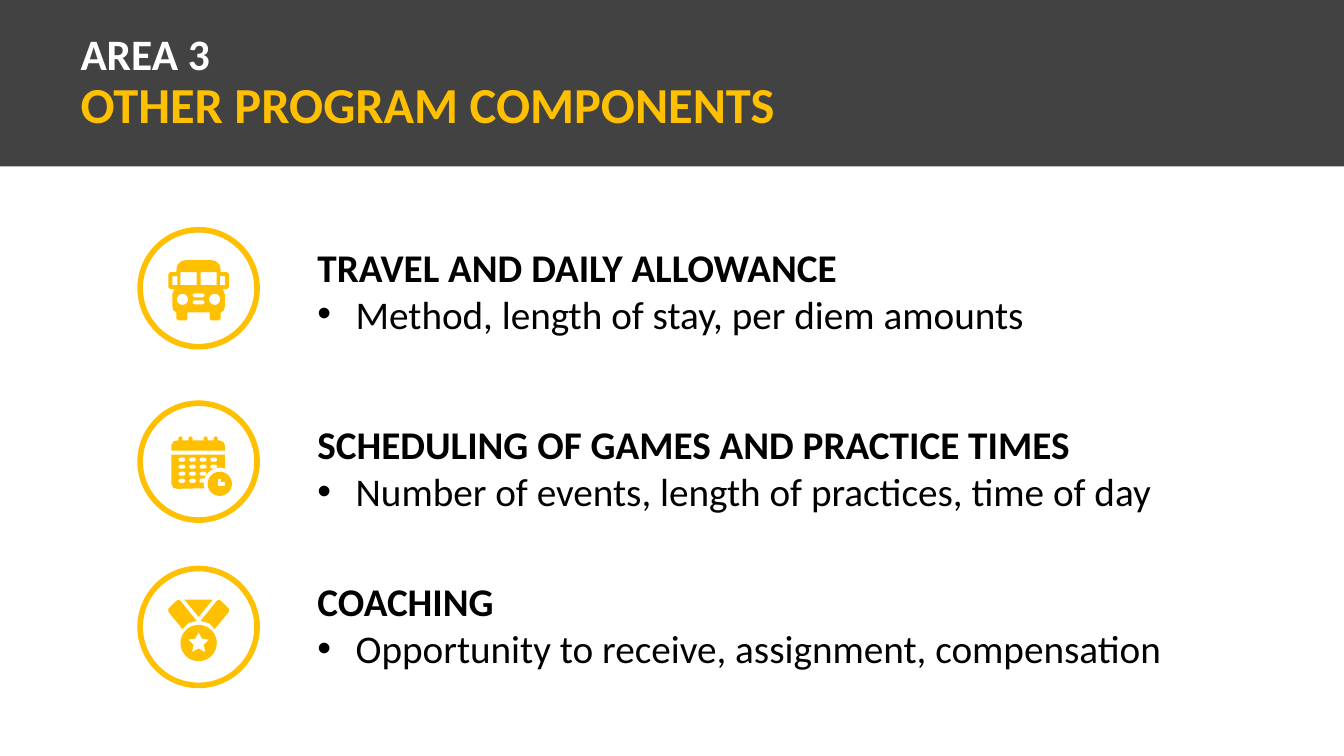
from dataclasses import dataclass
from math import cos, radians, sin

from lxml import etree
from pptx import Presentation
from pptx import util as u
from pptx.dml.color import RGBColor
from pptx.enum import shapes, text
from pptx.oxml.ns import qn

Inches, Pt = u.Inches, u.Pt


@dataclass(frozen=True)
class Theme:
    """Colours, font and type sizes of the slide."""
    band: RGBColor = RGBColor(0x42, 0x42, 0x42)
    accent: RGBColor = RGBColor(0xFF, 0xC0, 0x01)
    light: RGBColor = RGBColor(0xFF, 0xFF, 0xFF)
    dark: RGBColor = RGBColor(0, 0, 0)
    font: str = "Calibri"
    area_size: int = 31
    title_size: int = 36
    body_size: int = 28


THEME = Theme()
BADGE = 1.16


def arc(x, y, radius, start=0, end=352, step=8):
    """Return points along an arc, with angles in degrees."""
    steps = max(1, round(abs(end - start) / step))
    angles = [radians(start + (end - start) * i / steps) for i in range(steps + 1)]
    return [(x + radius * cos(a), y + radius * sin(a)) for a in angles]


def rectangle(x, y, width, height):
    """Return the corners of a rectangle."""
    return [(x, y), (x + width, y), (x + width, y + height), (x, y + height)]


def slot(x, y, width, height):
    """Return the outline of a bar with round ends."""
    r = height / 2
    return arc(x + r, y + r, r, 90, 270, 30) + arc(x + width - r, y + r, r, -90, 90, 30)


def mirror(points):
    """Return points reflected across the vertical axis, in reverse order."""
    return [(-x, y) for x, y in reversed(points)]


def star(x, y, outer, inner):
    """Return the outline of a five-pointed star."""
    angles = [radians(36 * i - 90) for i in range(10)]
    return [(x + (inner if i % 2 else outer) * cos(a), y + (inner if i % 2 else outer) * sin(a))
            for i, a in enumerate(angles)]


def bus_icon():
    """Return the bus as one part with windows, lights and grille cut out."""
    half = [(0, .30), (.12, .30), (.17, .31), (.21, .35), (.22, .40), (.22, .42),
            (.28, .42), (.30, .44), (.30, .57), (.28, .59), (.24, .59), (.26, .64),
            (.26, .76), (.25, .80), (.22, .82), (.22, .88), (.20, .90), (.12, .90),
            (.11, .88), (.11, .82), (0, .82)]
    sides = [rectangle(.21, .46, .05, .09), rectangle(.02, .42, .16, .13),
             arc(.16, .69, .055)]
    grille = [slot(-.06, y, .12, .04) for y in (.63, .70)]
    return [[half + mirror(half), *sides, *map(mirror, sides), *grille]]


def calendar_icon():
    """Return the calendar header, its page of days and the clock."""
    header = [(-.27, .47), (-.27, .42), (-.25, .38), (-.21, .37)]
    for x in (-.18, -.08, .07, .17):
        header += [(x - .02, .37), *arc(x, .35, .02, 180, 360, 30), (x + .02, .37)]
    header += [(.21, .37), (.25, .39), (.26, .42), (.26, .47)]

    clock = (.21, .80)
    page = [(-.27, .51), (.26, .51), *arc(*clock, .16, -70, -160), (.01, .75),
            (.01, .79), *arc(*clock, .16, -175, -196), (-.21, .85), (-.25, .84), (-.27, .80)]
    days = [slot(-.20 + .105 * column, .54 + .07 * row, .07, .04)
            for row, columns in enumerate((4, 4, 3, 2)) for column in range(columns)]
    hands = [(.19, .75), (.22, .75), (.22, .78), (.26, .78), (.26, .82), (.19, .82)]
    return [[header], [page, *days], [arc(*clock, .12), hands]]


def medal_icon():
    """Return the medal disc with a star cut out, and its ribbons."""
    ribbon = [(.20, .31), (.18, .32), (.02, .52), (.10, .54), (.16, .60),
              (.30, .43), (.30, .40), (.22, .32)]
    knot = [(-.14, .31), (.14, .31), (0, .48)]
    return [[arc(0, .74, .18), star(0, .74, .11, .055)], [ribbon], [mirror(ribbon)], [knot]]


def paint(shape, fill=None, line=None, width=4):
    """Set the fill and outline of a shape and take off its shadow."""
    shape.shadow.inherit = False
    if fill is None:
        shape.fill.background()
    else:
        shape.fill.solid()
        shape.fill.fore_color.rgb = fill
    if line is None:
        shape.line.fill.background()
    else:
        shape.line.color.rgb = line
        shape.line.width = Pt(width)


def set_font(font, size, colour, bold):
    """Apply the theme typeface with a size, colour and weight."""
    font.name, font.size, font.bold = THEME.font, Pt(size), bold
    font.color.rgb = colour


def add_text(slide, left, top, width, height):
    """Add a wrapping text box and return its frame."""
    box = slide.shapes.add_textbox(*map(Inches, (left, top, width, height)))
    box.text_frame.word_wrap = True
    return box.text_frame


def add_header(slide, left, top, width, height):
    """Add the dark band with the area label and title."""
    band = slide.shapes.add_shape(shapes.MSO_SHAPE.RECTANGLE,
                                  *map(Inches, (left, top, width, height)))
    paint(band, fill=THEME.band)
    frame = add_text(slide, left + .7, top + .21, 11.62, 1.25)
    frame.vertical_anchor = text.MSO_ANCHOR.MIDDLE
    paragraph = frame.paragraphs[0]
    paragraph.line_spacing = .9
    area = paragraph.add_run()
    area.text = "AREA 3"
    set_font(area.font, THEME.area_size, THEME.light, True)
    paragraph.add_line_break()
    title = paragraph.add_run()
    title.text = "OTHER PROGRAM COMPONENTS"
    set_font(title.font, THEME.title_size, THEME.accent, True)


def add_badge(slide, left, top, icon):
    """Add a ring with an icon centred across it."""
    ring = slide.shapes.add_shape(shapes.MSO_SHAPE.OVAL,
                                  *map(Inches, (left, top, BADGE, BADGE)))
    paint(ring, line=THEME.accent)
    for part in icon:
        outlines = [[(Inches(left + BADGE / 2 + x), Inches(top + y)) for x, y in outline]
                    for outline in part]
        builder = slide.shapes.build_freeform(*outlines[0][0])
        for i, outline in enumerate(outlines):
            if i:
                builder.move_to(*outline[0])
            builder.add_line_segments(outline[1:], close=True)
        paint(builder.convert_to_shape(), fill=THEME.accent)


def add_component(slide, left, top, text_offset, icon, heading, detail):
    """Add one program component: badge, heading and bullet."""
    add_badge(slide, left, top, icon)
    frame = add_text(slide, left + 1.66, top + text_offset, 8.67, 1.04)
    frame.text = heading
    set_font(frame.paragraphs[0].font, THEME.body_size, THEME.dark, True)
    bullet = frame.add_paragraph()
    bullet.text = detail
    properties = bullet._p.get_or_add_pPr()
    properties.set("marL", str(Inches(.38)))
    properties.set("indent", str(-Inches(.38)))
    etree.SubElement(properties, qn("a:buFont"), typeface="Arial")
    etree.SubElement(properties, qn("a:buChar"), char="•")
    set_font(bullet.font, THEME.body_size, THEME.dark, False)


def main():
    """Build the slide and save it."""
    presentation = Presentation()
    presentation.slide_width, presentation.slide_height = Inches(13.33), Inches(7.5)
    slide = presentation.slides.add_slide(presentation.slide_layouts[6])
    add_header(slide, 0, 0, 13.33, 1.65)
    components = [
        (2.28, .08, bus_icon(), "TRAVEL AND DAILY ALLOWANCE",
         "Method, length of stay, per diem amounts"),
        (4.00, .12, calendar_icon(), "SCHEDULING OF GAMES AND PRACTICE TIMES",
         "Number of events, length of practices, time of day"),
        (5.64, .04, medal_icon(), "COACHING",
         "Opportunity to receive, assignment, compensation"),
    ]
    for component in components:
        add_component(slide, 1.39, *component)
    presentation.save("out.pptx")


if __name__ == "__main__":
    main()
